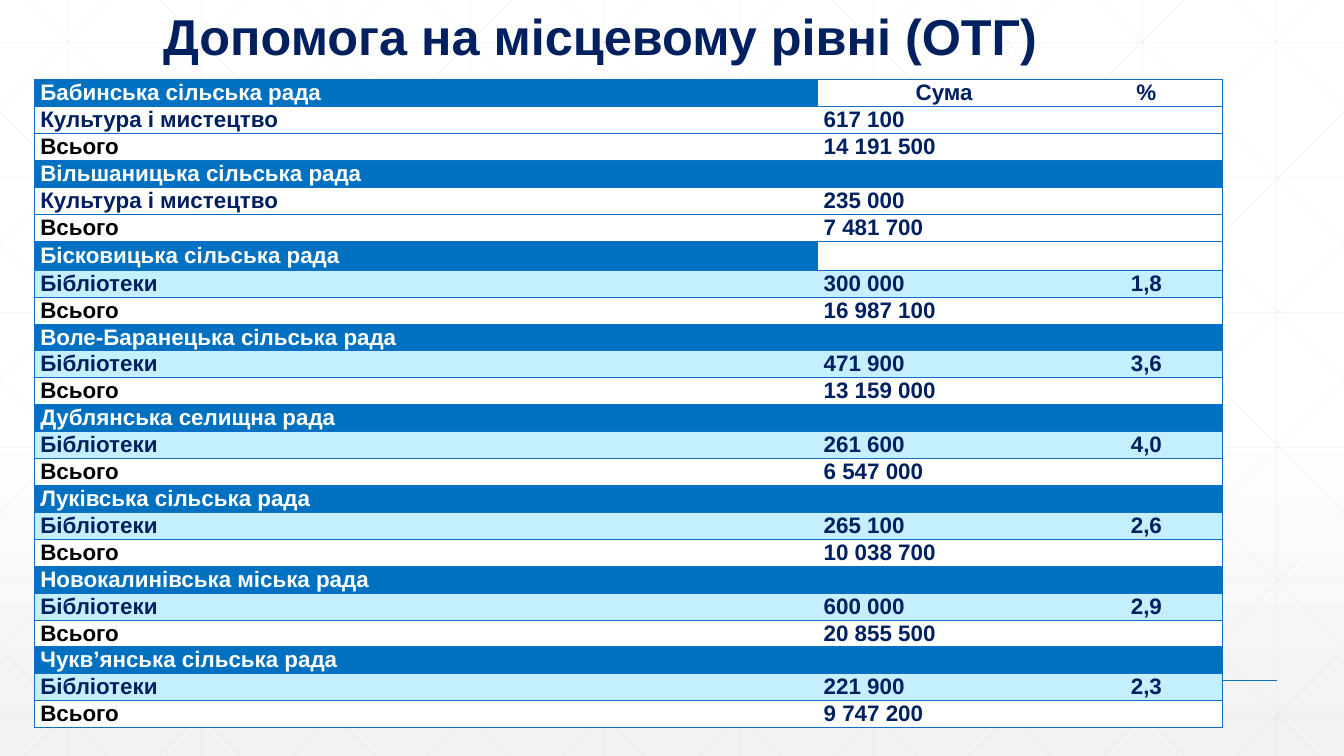
from lxml import etree
from pptx import Presentation, util as u
from pptx.dml.color import RGBColor
from pptx.enum import shapes, text
from pptx.oxml.ns import qn

WIDTH, HEIGHT = 13.33, 7.5
FONT = "Arial"
COLORS = {
    "navy": "002060", "blue": "0070C0", "border": "0F6FC6", "light": "C4EFFF",
    "white": "FFFFFF", "black": "000000", "mesh": "D9D9D9", "haze": "F2F2F2",
}
COLUMNS = [7.77, 2.51, 1.5]
ROW, TALL_ROW = u.Pt(19), u.Pt(20.7)
CULTURE, LIBRARIES, TOTAL = "Культура і мистецтво", "Бібліотеки", "Всього"
COUNCILS = [
    ("Бабинська сільська рада", CULTURE, "617 100", "", "14 191 500"),
    ("Вільшаницька сільська рада", CULTURE, "235 000", "", "7 481 700"),
    ("Бісковицька сільська рада", LIBRARIES, "300 000", "1,8", "16 987 100"),
    ("Воле-Баранецька сільська рада", LIBRARIES, "471 900", "3,6", "13 159 000"),
    ("Дублянська селищна рада", LIBRARIES, "261 600", "4,0", "6 547 000"),
    ("Луківська сільська рада", LIBRARIES, "265 100", "2,6", "10 038 700"),
    ("Новокалинівська міська рада", LIBRARIES, "600 000", "2,9", "20 855 500"),
    ("Чукв’янська сільська рада", LIBRARIES, "221 900", "2,3", "9 747 200"),
]
HEADINGS = {0: ("Сума", "%")}
OPEN_BANDS = (0, 2)


def color(name):
    """Return the named colour."""
    return RGBColor.from_string(COLORS[name])


def add_line(page, start, end, name, width, opacity=100):
    """Draw a straight line between two points in inches."""
    points = [u.Inches(value) for value in (*start, *end)]
    line = page.shapes.add_connector(shapes.MSO_CONNECTOR.STRAIGHT, *points)
    line.line.color.rgb = color(name)
    line.line.width = u.Pt(width)
    properties = line._element.spPr
    shade = properties.find(".//" + qn("a:srgbClr"))
    etree.SubElement(shade, qn("a:alpha"), val=str(opacity * 1000))
    etree.SubElement(properties, qn("a:effectLst"))


def style_paragraph(para, size, name, spacing, align):
    """Format a paragraph and its runs."""
    para.alignment = align
    para.line_spacing = spacing
    for span in para.runs:
        span.font.name = FONT
        span.font.size = u.Pt(size)
        span.font.bold = True
        span.font.color.rgb = color(name)


def add_backdrop(page, width, height):
    """Fill the page with a soft gradient and a mesh of faint lines."""
    fill = page.background.fill
    fill.gradient()
    fill.gradient_angle = 270
    for stop, place, name in zip(fill.gradient_stops, (0.53, 1), ("white", "haze")):
        stop.position = place
        stop.color.rgb = color(name)

    step = width / 10
    mesh = [((step * (i + 0.5), 0), (step * (i + 0.5), height)) for i in range(10)]
    mesh += [((0, 0.42 + 1.34 * i), (width, 0.42 + 1.34 * i)) for i in range(6)]
    starts = [(0.25 + step * i, 0) for i in range(10)]
    starts += [(0, 1.11 + step * i) for i in range(5)]
    for left, top in starts:
        reach = min(width - left, height - top)
        right, bottom = left + reach, top + reach
        mesh.append(((left, top), (right, bottom)))
        mesh.append(((width - left, top), (width - right, bottom)))
    for start, end in mesh:
        add_line(page, start, end, "mesh", 0.5, 25)
    add_line(page, (step / 2, height * 0.9), (width - step / 2, height * 0.9), "border", 1)


def add_title(page, left, top, width, height):
    """Place the centred slide title."""
    box = page.shapes.add_textbox(*map(u.Inches, (left, top, width, height)))
    frame = box.text_frame
    frame.word_wrap = True
    frame.vertical_anchor = text.MSO_ANCHOR.BOTTOM
    frame.text = "Допомога на місцевому рівні (ОТГ)"
    style_paragraph(frame.paragraphs[0], 36, "navy", 0.9, text.PP_ALIGN.CENTER)


def set_borders(cell, sides):
    """Rule the given sides of a cell and clear the others."""
    properties = cell._tc.get_or_add_tcPr()
    for place, side in enumerate("LRTB"):
        line = etree.Element(qn("a:ln" + side), w=str(u.Pt(0.5)))
        if side in sides:
            fill = etree.SubElement(line, qn("a:solidFill"))
            etree.SubElement(fill, qn("a:srgbClr"), val=COLORS["border"])
        else:
            etree.SubElement(line, qn("a:noFill"))
        properties.insert(place, line)


def fill_cell(cell, words, ink, back, align, sides):
    """Write and style one table cell."""
    cell.margin_left = cell.margin_right = u.Inches(0.06)
    cell.margin_top = cell.margin_bottom = 0
    cell.vertical_anchor = text.MSO_ANCHOR.MIDDLE
    cell.fill.solid()
    cell.fill.fore_color.rgb = color(back)
    set_borders(cell, sides)
    para = cell.text_frame.paragraphs[0]
    para.text = words
    style_paragraph(para, 16, ink, 1.0, align)
    ending = etree.SubElement(para._p, qn("a:endParaRPr"), sz="1600")
    etree.SubElement(ending, qn("a:latin"), typeface=FONT)


def council_rows():
    """List each row as words, label ink, label fill and value fill."""
    rows = []
    for index, (name, item, amount, percent, total) in enumerate(COUNCILS):
        band = "white" if index in OPEN_BANDS else "blue"
        back = "light" if item == LIBRARIES else "white"
        rows += [
            ((name, *HEADINGS.get(index, ("", ""))), "white", "blue", band),
            ((item, amount, percent), "navy", back, back),
            ((TOTAL, total, ""), "black", "white", "white"),
        ]
    return rows


def add_budget_table(page, left, top):
    """Place the table of councils, sums and shares."""
    rows = council_rows()
    tall_index = 3 * OPEN_BANDS[1]
    heights = [TALL_ROW if index == tall_index else ROW for index in range(len(rows))]
    frame = page.shapes.add_table(
        len(rows), len(COLUMNS), u.Inches(left), u.Inches(top),
        u.Inches(sum(COLUMNS)), sum(heights))
    table = frame.table
    table.first_row = table.horz_banding = False
    for column, width in zip(table.columns, COLUMNS):
        column.width = u.Inches(width)
    for index, (words, ink, label_back, value_back) in enumerate(rows):
        table.rows[index].height = heights[index]
        for place, word in enumerate(words):
            centred = place == 2 or word == HEADINGS[0][0]
            fill_cell(
                table.cell(index, place), word,
                "navy" if place else ink,
                value_back if place else label_back,
                text.PP_ALIGN.CENTER if centred else text.PP_ALIGN.LEFT,
                ("LTB", "TB", "RTB")[place])


def main():
    """Build and save the slide."""
    deck = Presentation()
    deck.slide_width, deck.slide_height = u.Inches(WIDTH), u.Inches(HEIGHT)
    page = deck.slides.add_slide(deck.slide_layouts[6])
    add_backdrop(page, WIDTH, HEIGHT)
    add_title(page, 0, 0.13, 11.91, 0.58)
    add_budget_table(page, 0.34, 0.79)
    deck.save("out.pptx")


if __name__ == "__main__":
    main()
